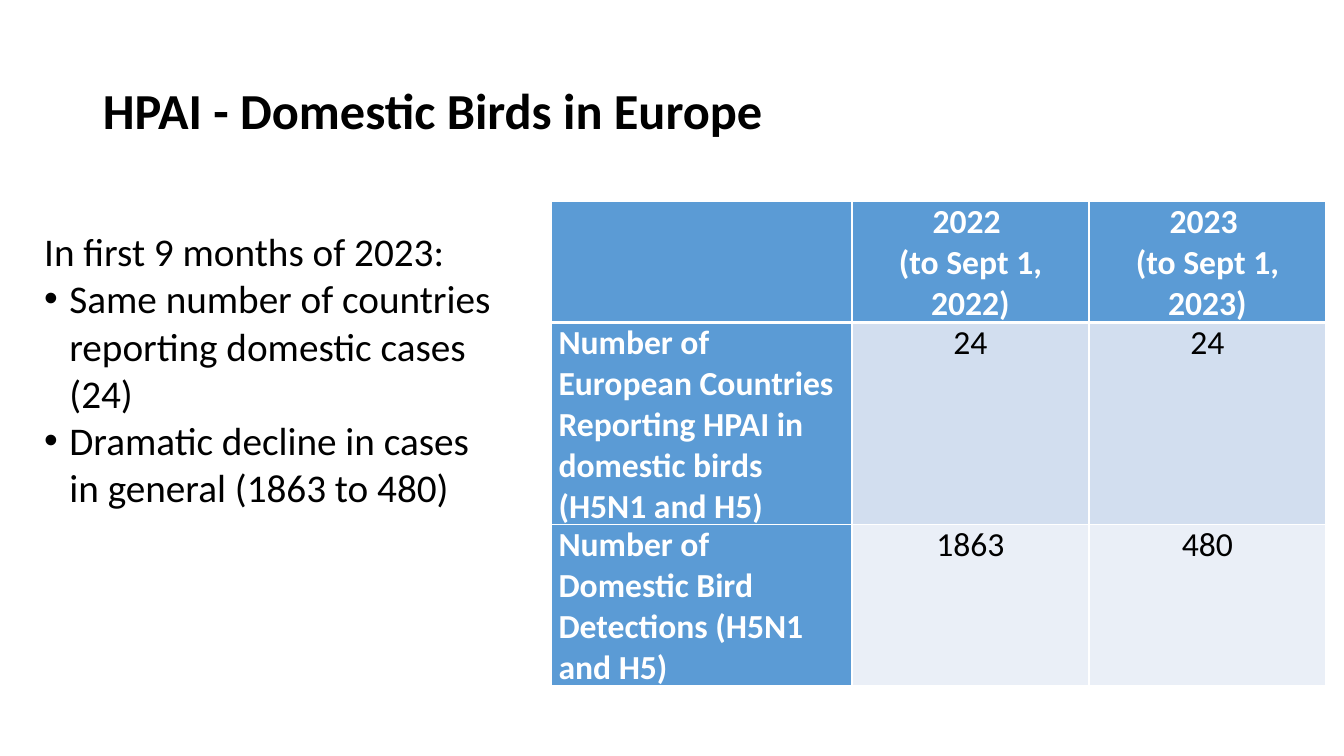
import pptx
import pptx.util
import pptx.dml.color
import pptx.enum.text
import pptx.oxml
import pptx.oxml.ns
from lxml import etree

Inches, Pt = pptx.util.Inches, pptx.util.Pt
PP_ALIGN, ANCHOR = pptx.enum.text.PP_ALIGN, pptx.enum.text.MSO_ANCHOR
qn = pptx.oxml.ns.qn

FONT = "Calibri"
COLORS = {"text": "000000", "white": "FFFFFF", "head": "5B9BD5",
          "band1": "D2DEEF", "band2": "EAEFF7"}

BULLETS = ["Same number of countries reporting domestic cases (24)",
           "Dramatic decline in cases in general (1863 to 480)"]
ROWS = [
    ["", "2022 \n(to Sept 1, 2022)", "2023 \n(to Sept 1, 2023)"],
    ["Number of European Countries Reporting HPAI in domestic birds "
     "(H5N1 and H5)", "24", "24"],
    ["Number of Domestic Bird Detections (H5N1 and H5)", "1863", "480"],
]
COL_WIDTHS = [2.98, 2.35, 2.35]
ROW_HEIGHTS = [0.87, 1.75, 1.17]


def rgb(name):
    return pptx.dml.color.RGBColor.from_string(COLORS[name])


def style(p, size, color="text", bold=False):
    for r in p.runs:
        r.font.name = FONT
        r.font.size = Pt(size)
        r.font.bold = bold
        r.font.color.rgb = rgb(color)


def place(sp, left, top, width, height):
    sp.left, sp.top = Inches(left), Inches(top)
    sp.width, sp.height = Inches(width), Inches(height)


def add_title(s, text):
    sp = s.shapes.title
    place(sp, 0.92, 0.4, 11.5, 1.45)
    tf = sp.text_frame
    tf.text = text
    tf.auto_size = pptx.enum.text.MSO_AUTO_SIZE.NONE
    tf.vertical_anchor = ANCHOR.MIDDLE
    p = tf.paragraphs[0]
    p.alignment = PP_ALIGN.LEFT
    p.line_spacing = 0.9
    style(p, 36, bold=True)


def add_bullet(p):
    pPr = p._p.get_or_add_pPr()
    pPr.set("marL", str(Inches(0.25)))
    pPr.set("indent", str(-Inches(0.25)))
    etree.SubElement(pPr, qn("a:buFont")).set("typeface", "Arial")
    etree.SubElement(pPr, qn("a:buChar")).set("char", "•")


def add_body(s, intro, bullets):
    sp = s.shapes.add_textbox(Inches(0.34), Inches(2.21),
                              Inches(4.64), Inches(4.55))
    tf = sp.text_frame
    tf.word_wrap = True
    tf.text = intro
    for text in bullets:
        p = tf.add_paragraph()
        p.text = text
        add_bullet(p)
    for p in tf.paragraphs:
        style(p, 28)


def set_borders(cell, top, bottom):
    """White cell borders; must be called before the fill is set."""
    tcPr = cell._tc.get_or_add_tcPr()
    for side, width in (("L", 1), ("R", 1), ("T", top), ("B", bottom)):
        ln = etree.SubElement(tcPr, qn("a:ln" + side), w=str(Pt(width)))
        fill = etree.SubElement(ln, qn("a:solidFill"))
        etree.SubElement(fill, qn("a:srgbClr"), val=COLORS["white"])


def fill_cell(cell, text, row, col):
    is_head = row == 0 or col == 0
    set_borders(cell, 3 if row == 1 else 1, 3 if row == 0 else 1)
    cell.fill.solid()
    cell.fill.fore_color.rgb = rgb("head" if is_head else f"band{row}")
    cell.margin_left = cell.margin_right = Inches(0.07)
    cell.margin_top = cell.margin_bottom = 0
    cell.text = text
    for p in cell.text_frame.paragraphs:
        p.alignment = PP_ALIGN.CENTER if col else PP_ALIGN.LEFT
        style(p, 24, "white" if is_head else "text", is_head)


def add_data_table(s):
    frame = s.shapes.add_table(len(ROWS), len(COL_WIDTHS), Inches(5.47),
                               Inches(2), Inches(sum(COL_WIDTHS)),
                               Inches(sum(ROW_HEIGHTS)))
    table = frame.table
    table.first_col = True
    for column, width in zip(table.columns, COL_WIDTHS):
        column.width = Inches(width)
    for i, texts in enumerate(ROWS):
        table.rows[i].height = Inches(ROW_HEIGHTS[i])
        for j, text in enumerate(texts):
            fill_cell(table.cell(i, j), text, i, j)


def main():
    prs = pptx.Presentation()
    prs.slide_width, prs.slide_height = Inches(13.33), Inches(7.5)
    s = prs.slides.add_slide(prs.slide_layouts[5])
    add_title(s, "HPAI - Domestic Birds in Europe")
    add_body(s, "In first 9 months of 2023:", BULLETS)
    add_data_table(s)
    prs.save("out.pptx")


if __name__ == "__main__":
    main()
